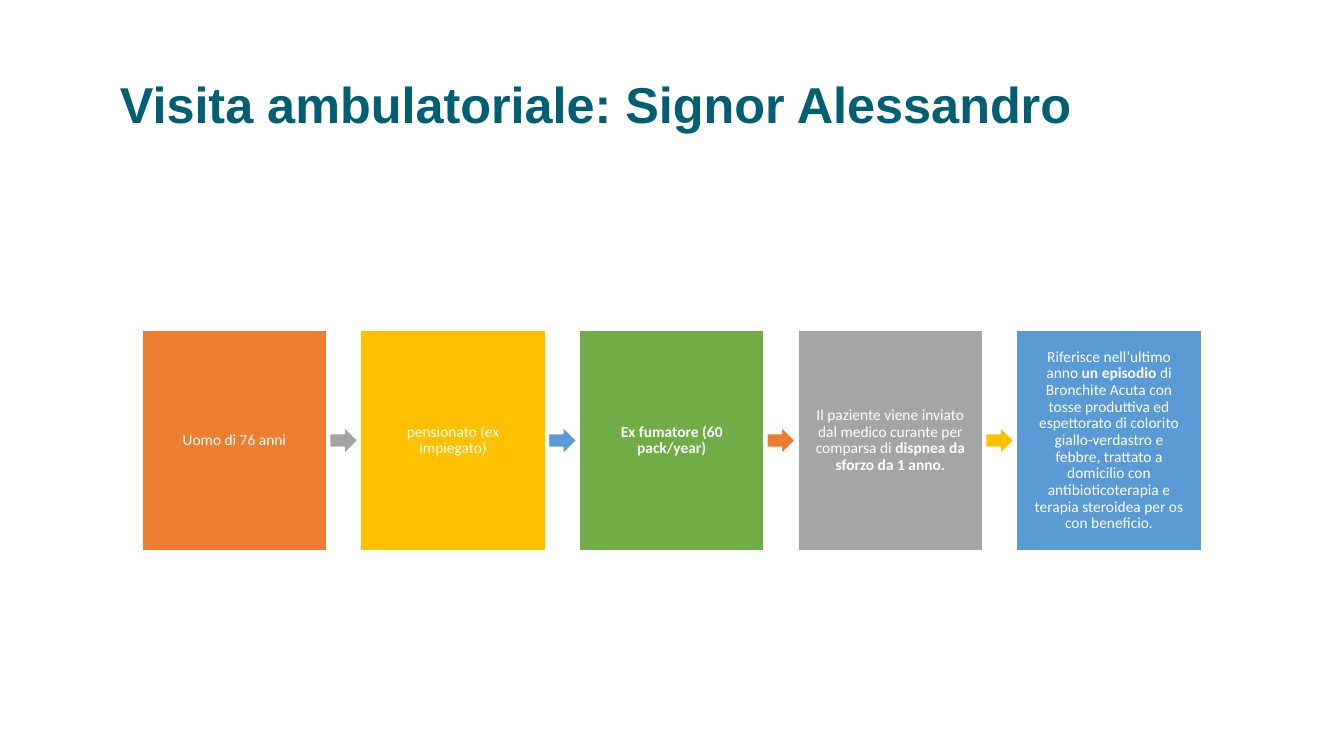
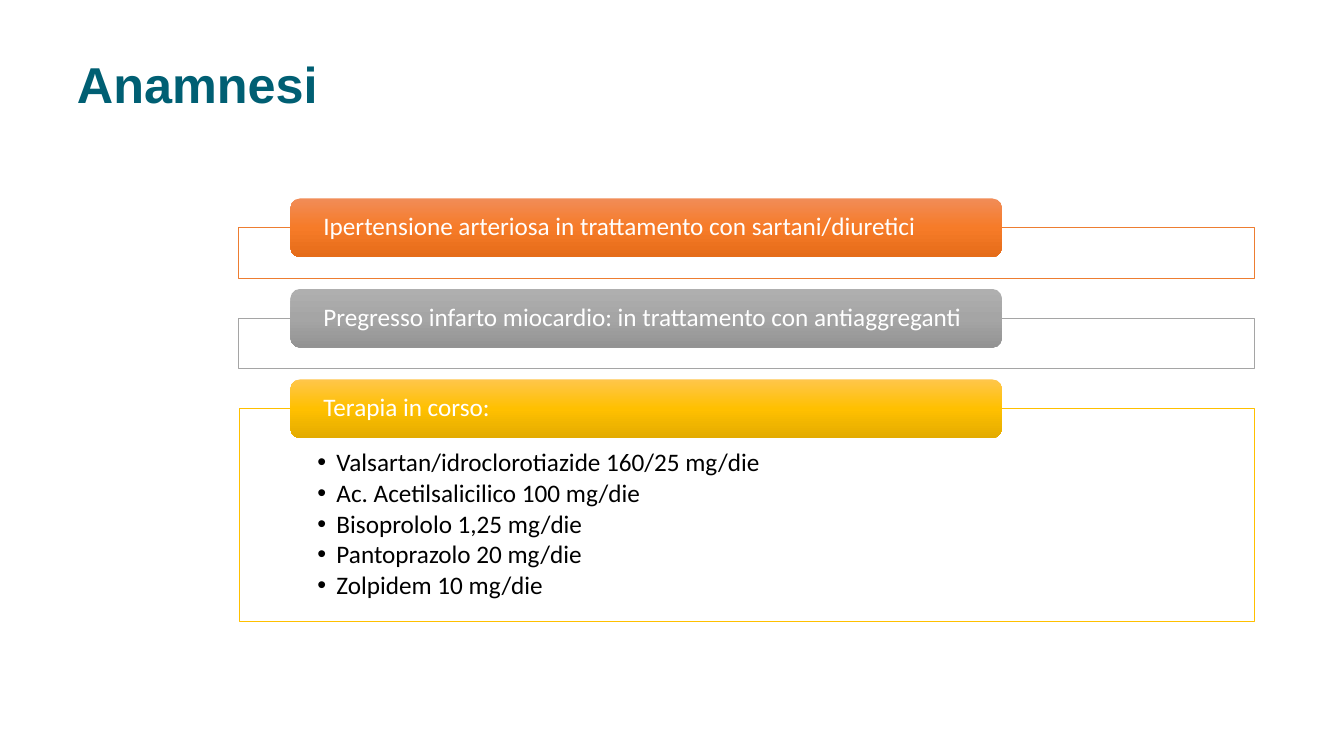
"""Build two clinical case slides: the outpatient visit and the medical history."""
from copy import deepcopy

from pptx import Presentation
from pptx.dml.color import RGBColor
from pptx.enum.shapes import MSO_SHAPE
from pptx.enum.text import MSO_ANCHOR, MSO_AUTO_SIZE, PP_ALIGN
from pptx.util import Cm, Pt

RECT, ROUND, ARROW = MSO_SHAPE.RECTANGLE, MSO_SHAPE.ROUNDED_RECTANGLE, MSO_SHAPE.RIGHT_ARROW
TOP, MIDDLE = MSO_ANCHOR.TOP, MSO_ANCHOR.MIDDLE
LEFT, CENTER = PP_ALIGN.LEFT, PP_ALIGN.CENTER
NO_FIT = MSO_AUTO_SIZE.NONE

TEAL = RGBColor(0x00, 0x5F, 0x73)
ORANGE = RGBColor(0xED, 0x7D, 0x31)
GREY = RGBColor(0xA5, 0xA5, 0xA5)
YELLOW = RGBColor(0xFF, 0xC0, 0x00)
GREEN = RGBColor(0x70, 0xAD, 0x47)
BLUE = RGBColor(0x5B, 0x9B, 0xD5)
WHITE = RGBColor(0xFF, 0xFF, 0xFF)
BLACK = RGBColor(0x00, 0x00, 0x00)
ORANGE_SHADES = RGBColor(0xF1, 0x8C, 0x57), RGBColor(0xF6, 0x7B, 0x28), RGBColor(0xE5, 0x6C, 0x19)
GREY_SHADES = RGBColor(0xAF, 0xAF, 0xAF), GREY, RGBColor(0x93, 0x93, 0x93)
YELLOW_SHADES = RGBColor(0xFF, 0xC6, 0x4B), YELLOW, RGBColor(0xE3, 0xAB, 0x00)

TITLE_FONT = {"name": "Arial", "size": Pt(36), "bold": True}
STEP_FONT = {"name": "Calibri", "size": Pt(11)}
HISTORY_FONT = {"name": "Calibri", "size": Pt(18), "bold": False}

VISIT_TITLE = "Visita ambulatoriale: Signor Alessandro"
VISIT_STEPS = [
    (ORANGE, [("Uomo di 76 anni", False)]),
    (YELLOW, [("pensionato (ex impiegato)", False)]),
    (GREEN, [("Ex fumatore (60 pack/year)", True)]),
    (GREY, [("Il paziente viene inviato dal medico curante per comparsa di ", False),
            ("dispnea da sforzo da 1 anno.", True)]),
    (BLUE, [("Riferisce nell’ultimo anno ", False), ("un episodio ", True),
            ("di Bronchite Acuta con tosse produttiva ed espettorato di colorito "
             "giallo-verdastro e febbre, trattato a domicilio con antibioticoterapia "
             "e terapia steroidea per os con beneficio.", False)]),
]
ARROW_COLORS = [GREY, BLUE, ORANGE, YELLOW]

HISTORY_TITLE = "Anamnesi"
HISTORY = [
    ("Ipertensione arteriosa in trattamento con sartani/diuretici", ORANGE, ORANGE_SHADES, []),
    ("Pregresso infarto miocardio: in trattamento con antiaggreganti", GREY, GREY_SHADES, []),
    ("Terapia in corso:", YELLOW, YELLOW_SHADES, [
        "Valsartan/idroclorotiazide 160/25 mg/die",
        "Ac. Acetilsalicilico 100 mg/die",
        "Bisoprololo 1,25 mg/die",
        "Pantoprazolo 20 mg/die",
        "Zolpidem 10 mg/die",
    ]),
]


def apply(target, formats):
    for key, value in formats.items():
        setattr(target, key, value)


def set_frame(frame, anchor, left, top, right, bottom):
    apply(frame, {"word_wrap": True, "auto_size": NO_FIT, "vertical_anchor": anchor,
                  "margin_left": Cm(left), "margin_top": Cm(top),
                  "margin_right": Cm(right), "margin_bottom": Cm(bottom)})


def write(paragraph, runs, font, color, **formats):
    apply(paragraph, {"space_before": Pt(0), "line_spacing": 0.9, **formats})
    for text, bold in runs:
        run = paragraph.add_run()
        run.text = text
        apply(run.font, {**font, "bold": bold})
        run.font.color.rgb = color


def place(part, left, top, width, height):
    apply(part, {"left": Cm(left), "top": Cm(top), "width": Cm(width), "height": Cm(height)})


def paint(part, fill, line, weight):
    part.fill.solid()
    part.fill.fore_color.rgb = fill
    part.line.color.rgb = line
    part.line.width = Pt(weight)


def add_part(slide, kind, left, top, width, height):
    part = slide.shapes.add_shape(kind, Cm(left), Cm(top), Cm(width), Cm(height))
    part.shadow.inherit = False
    return part


def add_titled_slide(deck, layout, text, left, top, width):
    slide = deck.slides.add_slide(deck.slide_layouts[layout])
    title = slide.shapes.title
    place(title, left, top, width, 3.05)
    set_frame(title.text_frame, TOP, 0.25, 0.13, 0.25, 0.13)
    write(title.text_frame.paragraphs[0], [(text, True)], TITLE_FONT, TEAL,
          alignment=LEFT, line_spacing=1.0)
    return slide


def shade(part, colors):
    part.fill.gradient()
    part.fill.gradient_angle = 270
    stop_list = part._element.xpath(".//a:gsLst")[0]
    stop_list.insert(1, deepcopy(stop_list[0]))
    for stop, color, position in zip(part.fill.gradient_stops, colors, (0, 0.5, 1)):
        stop.color.rgb = color
        stop.position = position


def build_visit(deck):
    slide = add_titled_slide(deck, 5, VISIT_TITLE, 2.77, 1.7, 28.32)
    left, top, width, height, pitch = 3.58, 8.33, 4.66, 5.54, 5.51
    arrow_width, arrow_height, arrow_gap = 0.71, 0.69, 0.07
    for index, (color, runs) in enumerate(VISIT_STEPS):
        step = add_part(slide, RECT, left + index * pitch, top, width, height)
        paint(step, color, WHITE, 1)
        set_frame(step.text_frame, MIDDLE, 0.43, 0.43, 0.43, 0.43)
        write(step.text_frame.paragraphs[0], runs, STEP_FONT, WHITE, alignment=CENTER)
    for index, color in enumerate(ARROW_COLORS):
        arrow = add_part(slide, ARROW, left + index * pitch + width + arrow_gap,
                         top + (height - arrow_height) / 2, arrow_width, arrow_height)
        paint(arrow, color, WHITE, 1)


def fill_therapy(therapy, drugs):
    frame = therapy.text_frame
    set_frame(frame, TOP, 1.98, 1.04, 1.98, 0.36)
    for index, drug in enumerate(drugs):
        paragraph = frame.add_paragraph() if index else frame.paragraphs[0]
        write(paragraph, [(drug, False)], HISTORY_FONT, BLACK,
              alignment=LEFT, space_after=Pt(2.4))
        properties = paragraph._p.get_or_add_pPr()
        properties.set("marL", str(Cm(0.48)))
        properties.set("indent", str(-Cm(0.48)))


def build_history(deck):
    slide = add_titled_slide(deck, 1, HISTORY_TITLE, 1.69, 1.2, 9.86)
    left, top, width, gap = 6.02, 5.74, 25.6, 1.01
    tab_left, tab_width, tab_height = 7.32, 17.93, 1.48
    for heading, color, shades, drugs in HISTORY:
        height = 5.36 if drugs else 1.27
        if drugs:
            panel = slide.placeholders[1]
            place(panel, left, top, width, height)
            fill_therapy(panel, drugs)
        else:
            panel = add_part(slide, RECT, left, top, width, height)
        paint(panel, WHITE, color, 0.5)
        tab = add_part(slide, ROUND, tab_left, top - tab_height / 2, tab_width, tab_height)
        shade(tab, shades)
        tab.line.fill.background()
        set_frame(tab.text_frame, MIDDLE, 0.76, 0, 0.76, 0)
        write(tab.text_frame.paragraphs[0], [(heading, False)], HISTORY_FONT, WHITE,
              alignment=LEFT)
        top += height + gap


def main():
    deck = Presentation()
    apply(deck, {"slide_width": Cm(33.87), "slide_height": Cm(19.05)})
    build_visit(deck)
    build_history(deck)
    deck.save("out.pptx")


if __name__ == "__main__":
    main()
